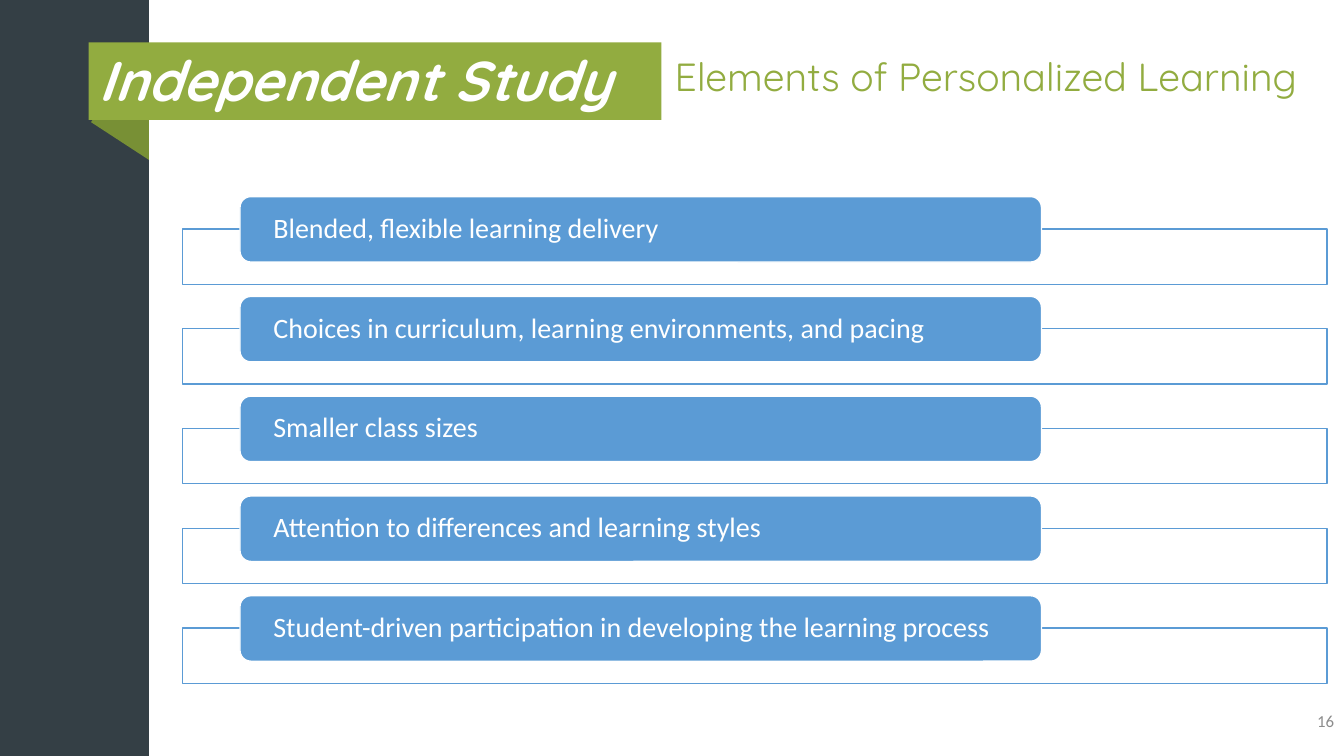
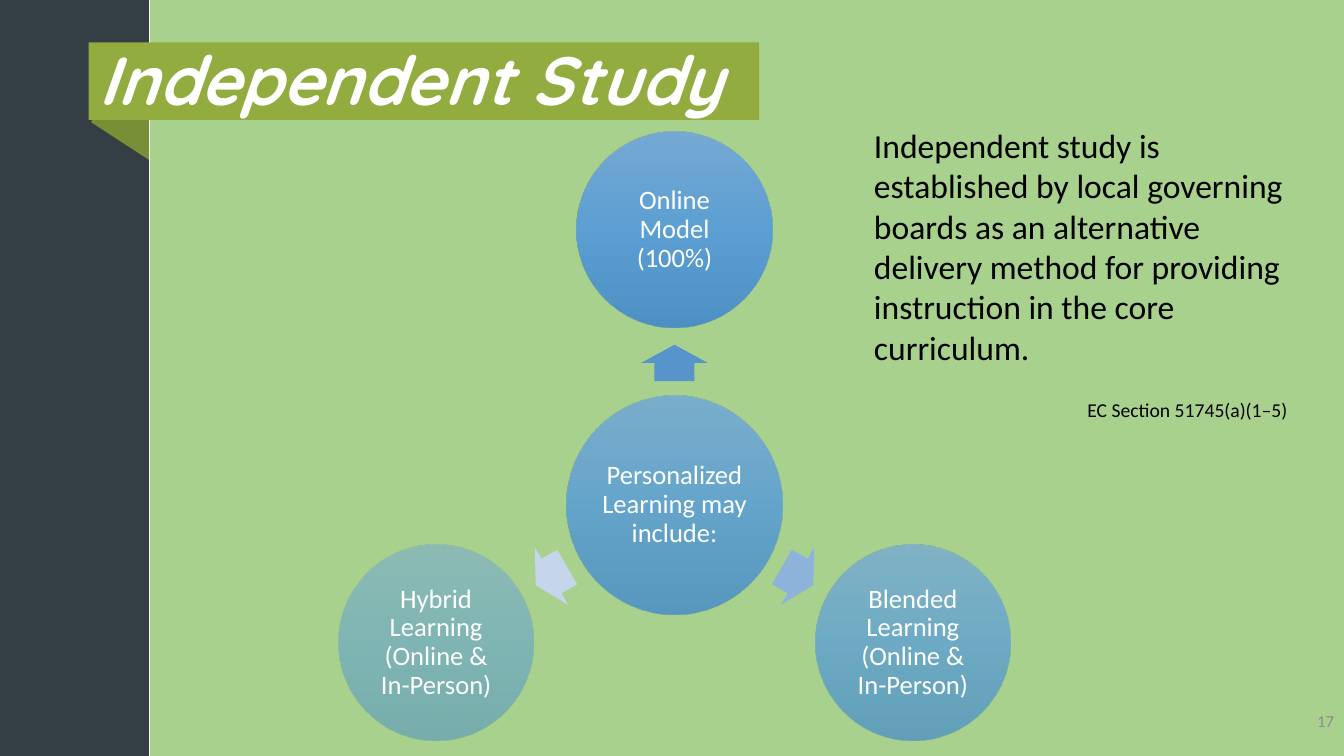
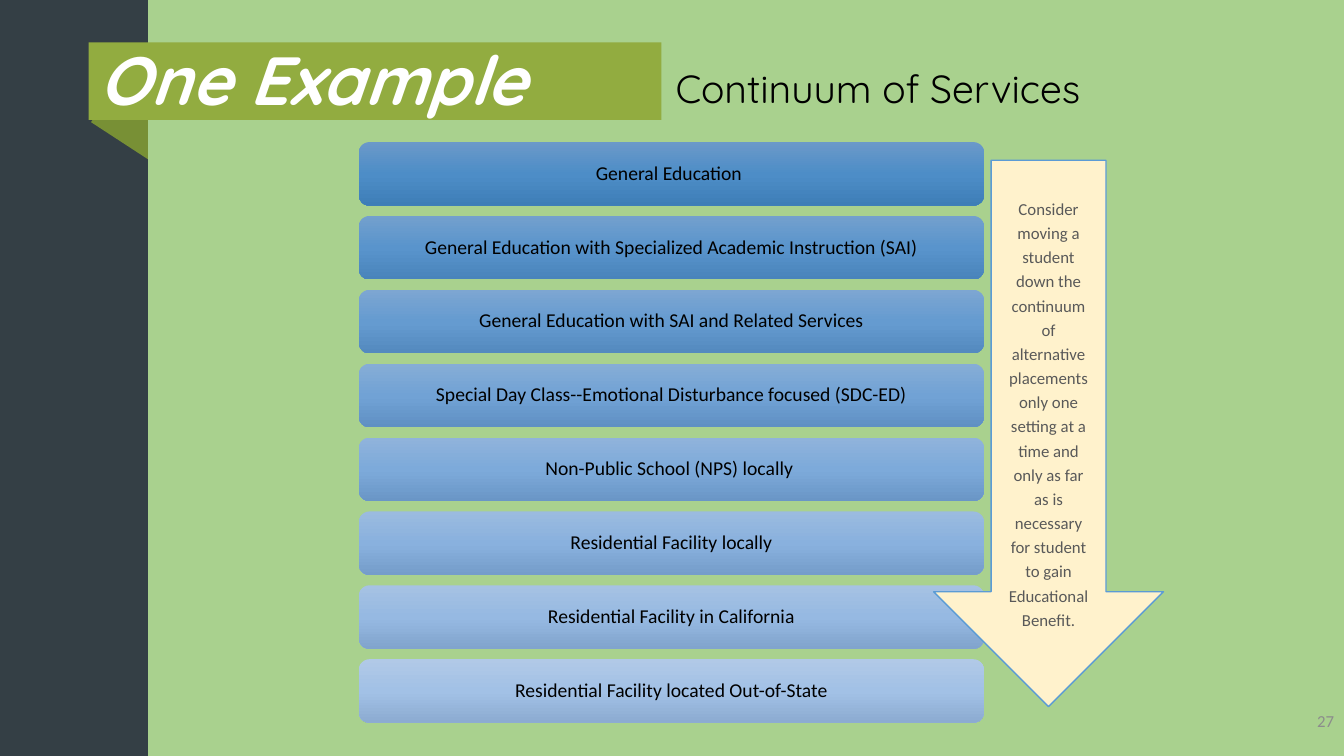
from math import cos, radians, sin

from lxml import etree
from pptx import Presentation
from pptx.dml.color import RGBColor
from pptx.enum.shapes import MSO_SHAPE as SHAPE
from pptx.enum.text import MSO_ANCHOR as ANCHOR, MSO_AUTO_SIZE as AUTOSIZE, PP_ALIGN as ALIGN
from pptx.oxml.ns import qn
from pptx.util import Inches, Pt

COLORS = {
    "slate": "343F45", "fold": "789035", "olive": "92AC40", "white": "FFFFFF",
    "mint": "A9D18E", "blue": "5B9BD5", "cream": "FFF2CC", "black": "000000",
    "gray": "595959", "number": "8C8C8C",
}

ELEMENTS = [
    "Blended, flexible learning delivery",
    "Choices in curriculum, learning environments, and pacing",
    "Smaller class sizes",
    "Attention to differences and learning styles",
    "Student-driven participation in developing the learning process",
]

HUB = "Personalized Learning may include:"
HUB_OPACITY = 80
CIRCLE_GRADIENT = ("71A6DB", "559BDB", "448ACA")
MODELS = [
    ("Online Model (100%)", -90, 90, "5794CB"),
    ("Blended Learning (Online & In-Person)", 30, 70, "8EB3DB"),
    ("Hybrid Learning (Online & In-Person)", 150, 50, "C5D5EB"),
]
DEFINITION = ("Independent study is established by local governing boards as an alternative "
              "delivery method for providing instruction in the core curriculum.")
CITATION = "EC Section 51745(a)(1–5)"

SERVICES = [
    ("General Education \t", ("6B99C9", "4D8DC7", "3E7EB7")),
    ("General Education with Specialized Academic Instruction (SAI)", ("73A0CD", "5994CC", "4984BB")),
    ("General Education with SAI and Related Services", ("7DA6D2", "659BD0", "548ABF")),
    ("Special Day Class--Emotional Disturbance focused (SDC-ED)", ("86ADD6", "71A2D5", "5F90C3")),
    ("Non-Public School (NPS) locally\t", ("90B3DB", "7DAADA", "6A96C6")),
    ("Residential Facility locally", ("9BBBDF", "89B1DE", "759DCA")),
    ("Residential Facility in California", ("A6C2E3", "96B9E2", "81A4CD")),
    ("Residential Facility located Out-of-State", ("B1C9E7", "A2C1E6", "8CABD1")),
]
ADVICE = ("Consider moving a student down the continuum of alternative placements only one "
          "setting at a time and only as far as is necessary for student to gain Educational Benefit.")

TITLE_ONLY, TITLE_BODY = 5, 1


def rgb(color):
    return RGBColor.from_string(COLORS.get(color, color))


def place(sp, x, y, w, h):
    sp.left, sp.top, sp.width, sp.height = Inches(x), Inches(y), Inches(w), Inches(h)


def add_shape(slide, kind, x, y, w, h, fill=None, line=None):
    sp = slide.shapes.add_shape(kind, Inches(x), Inches(y), Inches(w), Inches(h))
    sp.shadow.inherit = False
    if fill:
        sp.fill.solid()
        sp.fill.fore_color.rgb = rgb(fill)
    if line:
        sp.line.color.rgb = rgb(line)
        sp.line.width = Pt(1)
    else:
        sp.line.fill.background()
    return sp


def set_gradient(sp, colors, opacity=100):
    sp.fill.gradient()
    sp.fill.gradient_angle = 270
    stops = sp.element.spPr.find(qn("a:gradFill")).find(qn("a:gsLst"))
    for stop in list(stops):
        stops.remove(stop)
    for i, color in enumerate(colors):
        stop = etree.SubElement(stops, qn("a:gs"), pos=str(i * 50000))
        clr = etree.SubElement(stop, qn("a:srgbClr"), val=color)
        etree.SubElement(clr, qn("a:alpha"), val=str(opacity * 1000))


def format_paragraph(p, size, color, font="Calibri", align=ALIGN.LEFT, spacing=0.9):
    p.alignment = align
    p.line_spacing = spacing
    p.space_before = Pt(0)
    for r in p.runs:
        r.font.name = font
        r.font.size = Pt(size)
        r.font.color.rgb = rgb(color)


def set_text(sp, text, size, color, insets=(0.1, 0.05, 0.1, 0.05), anchor=ANCHOR.MIDDLE, **style):
    tf = sp.text_frame
    tf.word_wrap = True
    tf.auto_size = AUTOSIZE.NONE
    tf.vertical_anchor = anchor
    tf.margin_left, tf.margin_top, tf.margin_right, tf.margin_bottom = map(Inches, insets)
    tf.text = text
    format_paragraph(tf.paragraphs[0], size, color, **style)
    return tf


def add_textbox(slide, x, y, w, h, text, size, color, **style):
    sp = slide.shapes.add_textbox(Inches(x), Inches(y), Inches(w), Inches(h))
    return set_text(sp, text, size, color, **style)


def decorate_master(prs, slide):
    master = prs.slide_master
    master.background.fill.solid()
    master.background.fill.fore_color.rgb = rgb("slate")
    fold = add_shape(slide, SHAPE.RECTANGLE, 1.2, 0.65, 0.74, 1.11, "fold")
    fold.rotation = 303.1
    panel = add_shape(slide, SHAPE.RECTANGLE, 1.48, 0, 11.85, 7.5, "white")
    for i, sp in enumerate((fold, panel)):
        sp.element.nvSpPr.cNvPr.set("id", str(101 + i))
        master.shapes.element.insert(2 + i, sp.element)


def start_slide(prs, layout, number, title, title_width, title_size, panel_left=None):
    slide = prs.slides.add_slide(prs.slide_layouts[layout])
    if panel_left:
        panel = add_shape(slide, SHAPE.RECTANGLE, panel_left, 0, 13.33 - panel_left, 7.5, "mint")
        slide.shapes.element.insert(2, panel.element)
    sp = slide.shapes.title
    place(sp, 0.88, 0.42, title_width, 0.77)
    sp.fill.solid()
    sp.fill.fore_color.rgb = rgb("olive")
    tf = set_text(sp, title, title_size, "white", (0.1, 0.1, 0.1, 0.05), font="Quicksand")
    font = tf.paragraphs[0].runs[0].font
    font.bold = font.italic = True
    add_textbox(slide, 10.33, 6.95, 3, 0.4, number, 12, "number", align=ALIGN.RIGHT, spacing=1)
    return slide


def set_subtitle(slide, x, y, text, color):
    sp = slide.placeholders[1]
    place(sp, x, y, 6.75, 0.56)
    tf = set_text(sp, text, 28, color, anchor=ANCHOR.TOP, font="Quicksand")
    pPr = tf.paragraphs[0]._p.get_or_add_pPr()
    pPr.set("marL", "0")
    pPr.set("indent", "0")
    etree.SubElement(pPr, qn("a:buNone"))


def build_elements(prs):
    slide = start_slide(prs, TITLE_BODY, "16", "Independent Study", 5.68, 40)
    decorate_master(prs, slide)
    set_subtitle(slide, 6.59, 0.52, "Elements of Personalized Learning", "olive")
    for i, text in enumerate(ELEMENTS):
        y = 1.95 + 0.99 * i
        add_shape(slide, SHAPE.RECTANGLE, 1.81, y + 0.32, 11.35, 0.55, "white", "blue")
        pill = add_shape(slide, SHAPE.ROUNDED_RECTANGLE, 2.38, y, 7.95, 0.65, "blue", "white")
        set_text(pill, text, 20, "white", (0.3, 0, 0.3, 0))


def add_circle(slide, cx, cy, w, h, text, opacity):
    sp = add_shape(slide, SHAPE.OVAL, cx - w / 2, cy - h / 2, w, h)
    set_gradient(sp, CIRCLE_GRADIENT, opacity)
    set_text(sp, text, 19, "white", (0.03,) * 4, align=ALIGN.CENTER)


def build_models(prs):
    slide = start_slide(prs, TITLE_ONLY, "17", "Independent Study", 6.65, 48.6, 1.49)
    cx, cy, circle_reach, arrow_reach = 6.69, 5.01, 2.73, 1.41
    arrow_w, arrow_h = 0.36, 0.66
    add_circle(slide, cx, cy, 2.14, 2.17, HUB, HUB_OPACITY)
    for text, angle, opacity, arrow_color in MODELS:
        dx, dy = cos(radians(angle)), sin(radians(angle))
        arrow = add_shape(slide, SHAPE.RIGHT_ARROW, cx + arrow_reach * dx - arrow_w / 2,
                          cy + arrow_reach * dy - arrow_h / 2, arrow_w, arrow_h, arrow_color)
        arrow.adjustments[0] = 0.6
        arrow.rotation = angle % 360
        add_circle(slide, cx + circle_reach * dx, cy + circle_reach * dy, 1.94, 1.94, text, opacity)
    tf = add_textbox(slide, 8.57, 1.19, 4.3, 3.06, DEFINITION, 24, "black",
                     anchor=ANCHOR.TOP, spacing=1)
    p = tf.add_paragraph()
    p.text = CITATION
    format_paragraph(p, 14, "black", align=ALIGN.RIGHT, spacing=1)
    p.space_before = Pt(22)


def build_continuum(prs):
    slide = start_slide(prs, TITLE_BODY, "27", "One Example", 5.68, 48.6, 1.47)
    set_subtitle(slide, 6.6, 0.64, "Continuum of Services", "black")
    first, last = 1.41, 6.54
    pitch = (last - first) / (len(SERVICES) - 1)
    for i, (text, colors) in enumerate(SERVICES):
        bar = add_shape(slide, SHAPE.ROUNDED_RECTANGLE, 3.56, first + pitch * i, 6.2, 0.63)
        set_gradient(bar, colors)
        set_text(bar, text, 14, "black", (0.06,) * 4, align=ALIGN.CENTER)
    arrow = add_shape(slide, SHAPE.DOWN_ARROW, 9.26, 1.59, 2.28, 5.42, "cream", "blue")
    set_text(arrow, ADVICE, 12, "gray", (0.16, 0.34, 0.16, 0), ANCHOR.TOP,
             align=ALIGN.CENTER, spacing=1.2)


def main():
    prs = Presentation()
    prs.slide_width, prs.slide_height = Inches(13.33), Inches(7.5)
    build_elements(prs)
    build_models(prs)
    build_continuum(prs)
    prs.save("out.pptx")


if __name__ == "__main__":
    main()
